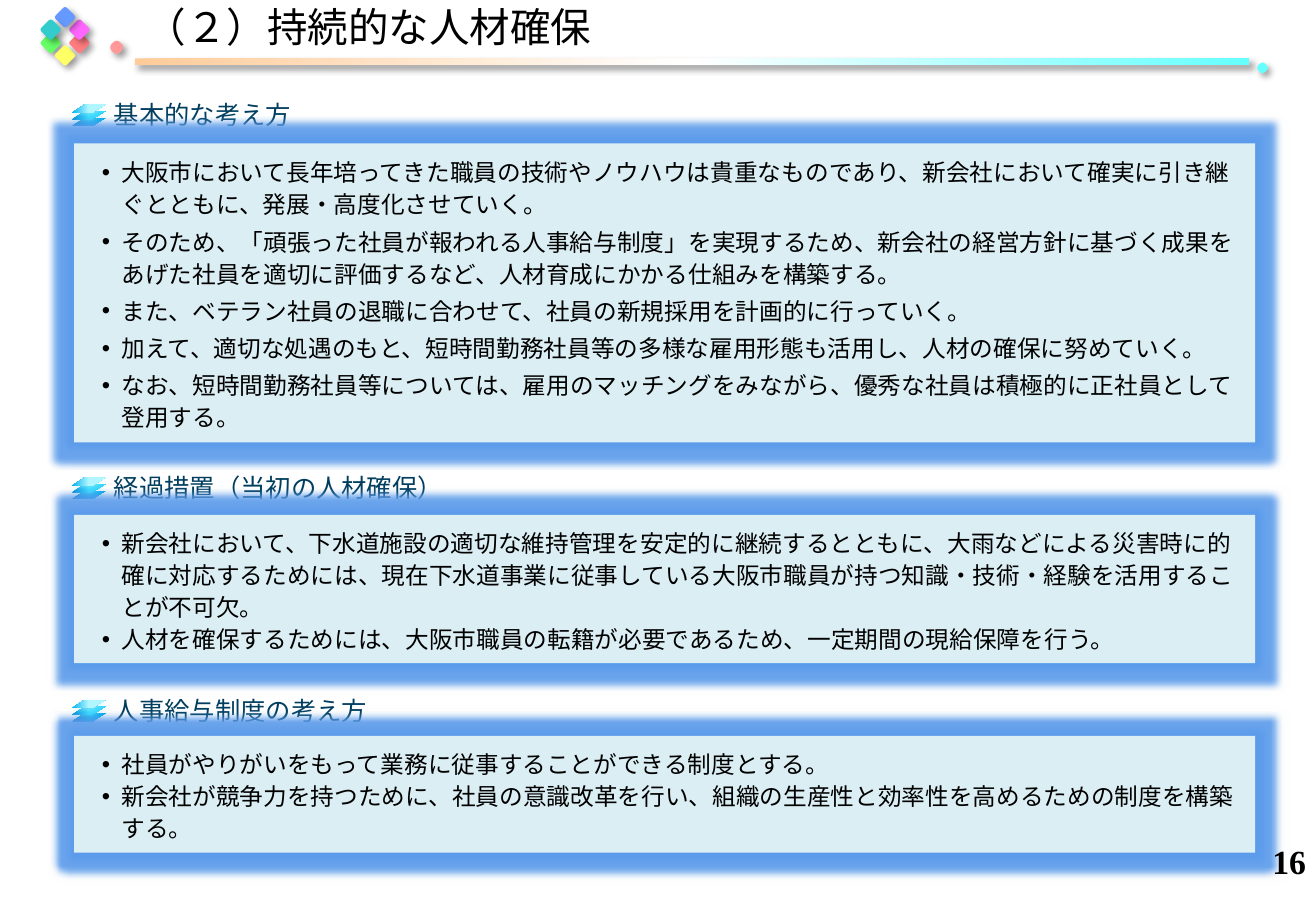
from copy import deepcopy

from lxml.etree import SubElement
from pptx import Presentation
from pptx.dml.color import RGBColor
from pptx.enum.lang import MSO_LANGUAGE_ID
from pptx.enum.shapes import MSO_SHAPE
from pptx.enum.text import MSO_ANCHOR, MSO_AUTO_SIZE, PP_ALIGN
from pptx.oxml.ns import qn
from pptx.util import Cm, Pt

SANS = "Noto Sans CJK JP"
SERIF = "Times New Roman"
HUES = {
    "ink": "000000", "head": "003E60", "panel": "DBEEF4", "shade": "B7DEE8",
    "glow": "5B9BEB", "ice": "B1F6FF", "green": "66FF66", "yellow": "FFFF66",
    "coral": "FF7C80", "pink": "FF66FF", "blue": "6699FF", "teal": "33CCCC",
    "peach": "FFCC99", "white": "FFFFFF", "aqua": "66FFFF", "rose": "FF9999",
    "deep": "0070C0", "sky": "00B0F0", "mid": "008BD8", "light": "39D9FF",
    "top": "00B1F0",
}
GEMS = [("green", -0.3, 0.14), ("yellow", 0, 0.4), ("coral", 0.3, 0.14),
        ("pink", 0.3, -0.14), ("blue", 0, -0.4), ("teal", -0.3, -0.14)]
LAYERS = [(1.57, "deep", "sky"), (1.6, "mid", "light"), (1.53, "top", "ice")]
DARK = ("ink", 40, 4, 3, 45)
SECTIONS = [
    ("基本的な考え方", 1.98, 3.0, 6.25, 3, [
        "大阪市において長年培ってきた職員の技術やノウハウは貴重なものであり、新会社において確実に引き継ぐとともに、発展・高度化させていく。",
        "そのため、「頑張った社員が報われる人事給与制度」を実現するため、新会社の経営方針に基づく成果をあげた社員を適切に評価するなど、人材育成にかかる仕組みを構築する。",
        "また、ベテラン社員の退職に合わせて、社員の新規採用を計画的に行っていく。",
        "加えて、適切な処遇のもと、短時間勤務社員等の多様な雇用形態も活用し、人材の確保に努めていく。",
        "なお、短時間勤務社員等については、雇用のマッチングをみながら、優秀な社員は積極的に正社員として登用する。",
    ]),
    ("経過措置（当初の人材確保）", 9.78, 10.77, 3.1, 0, [
        "新会社において、下水道施設の適切な維持管理を安定的に継続するとともに、大雨などによる災害時に的確に対応するためには、現在下水道事業に従事している大阪市職員が持つ知識・技術・経験を活用することが不可欠。",
        "人材を確保するためには、大阪市職員の転籍が必要であるため、一定期間の現給保障を行う。",
    ]),
    ("人事給与制度の考え方", 14.43, 15.39, 2.44, 0, [
        "社員がやりがいをもって業務に従事することができる制度とする。",
        "新会社が競争力を持つために、社員の意識改革を行い、組織の生産性と効率性を高めるための制度を構築する。",
    ]),
]


def color(name):
    """Return the named colour."""
    return RGBColor.from_string(HUES[name])


def tint(node, name, alpha):
    """Add a part-clear colour to an effect."""
    clr = SubElement(node, qn("a:srgbClr"), val=HUES[name])
    SubElement(clr, qn("a:alpha"), val=str(alpha * 1000))


def effect(shape, shade, glow=0):
    """Give a shape a shadow and, if asked, a glow."""
    shape.shadow.inherit = False
    name, alpha, blur, dist, angle = shade
    group = shape._element.spPr.find(qn("a:effectLst"))
    if glow:
        tint(SubElement(group, qn("a:glow"), rad=str(Pt(glow))), "glow", 90)
    node = SubElement(group, qn("a:outerShdw"), blurRad=str(Pt(blur)),
                      dist=str(Pt(dist)), dir=str(angle * 60000),
                      algn="ctr", rotWithShape="0")
    tint(node, name, alpha)


def blend(shape, stops):
    """Fill a shape with a left-to-right gradient."""
    fill = shape.fill
    fill.gradient()
    fill.gradient_angle = 0
    group = shape._element.spPr.find(".//" + qn("a:gsLst"))
    while len(group) < len(stops):
        group.append(deepcopy(group[0]))
    for stop, (place, name) in zip(fill.gradient_stops, stops):
        stop.position = place
        stop.color.rgb = color(name)


def block(slide, kind, box, name=None, turn=0, curve=None):
    """Add a shape without outline."""
    shape = slide.shapes.add_shape(kind, *[Cm(n) for n in box])
    shape.shadow.inherit = False
    shape.line.fill.background()
    shape.rotation = turn
    if curve is not None:
        shape.adjustments[0] = curve
    if name:
        shape.fill.solid()
        shape.fill.fore_color.rgb = color(name)
    else:
        shape.fill.background()
    return shape


def style(para, size, name="ink", face=SANS, bold=False):
    """Format the runs of a paragraph."""
    for run in para.runs:
        font = run.font
        font.size, font.bold, font.name = Pt(size), bold, face
        font.color.rgb = color(name)
        font.language_id = MSO_LANGUAGE_ID.JAPANESE
        SubElement(run._r.get_or_add_rPr(), qn("a:ea"), typeface=face)


def setup(shape, wrap, inset=None):
    """Prepare a text frame with middle anchor."""
    frame = shape.text_frame
    frame.word_wrap = wrap
    frame.auto_size = MSO_AUTO_SIZE.NONE
    frame.vertical_anchor = MSO_ANCHOR.MIDDLE
    if inset is not None:
        frame.margin_left = frame.margin_right = Cm(inset)
        frame.margin_top = frame.margin_bottom = Cm(inset)
    return frame


def gem(slide, mid, size, name, curve=None):
    """Add a rounded diamond around its centre."""
    left, top = (n - size / 2 for n in mid)
    shape = block(slide, MSO_SHAPE.ROUNDED_RECTANGLE,
                  (left, top, size, size), name, 45, curve)
    effect(shape, DARK)


def banner(slide):
    """Draw the diamonds and the rule under the title."""
    for name, right, down in GEMS:
        gem(slide, (1.36 + right, 0.76 + down), 0.33, name)
    bar = block(slide, MSO_SHAPE.ROUNDED_RECTANGLE, (2.82, 1.22, 23.29, 0.15))
    blend(bar, [(0, "peach"), (0.5, "white"), (1, "aqua")])
    effect(bar, DARK)
    gem(slide, (26.39, 1.42), 0.2, "aqua", 0.38)
    gem(slide, (2.44, 0.99), 0.25, "rose", 0.38)


def title(slide, text):
    """Place and format the slide title."""
    shape = slide.shapes.title
    shape.left, shape.top, shape.width, shape.height = (
        Cm(n) for n in (2.79, 0, 23.29, 1.09))
    frame = setup(shape, False)
    frame.text = text
    para = frame.paragraphs[0]
    para.alignment = PP_ALIGN.LEFT
    para.space_before = Pt(6)
    style(para, 24)


def header(slide, text, top):
    """Add a section heading with its stacked icon."""
    shape = block(slide, MSO_SHAPE.ROUNDED_RECTANGLE,
                  (2.26, top, 3.25, 0.84), curve=0.09)
    frame = setup(shape, False, 0.1)
    frame.text = text
    frame.paragraphs[0].alignment = PP_ALIGN.LEFT
    style(frame.paragraphs[0], 15, "head")
    for row, (slant, start, end) in enumerate(LAYERS):
        layer = block(slide, MSO_SHAPE.PARALLELOGRAM,
                      (1.5, top + 0.48 - 0.14 * row, 0.71, 0.18), curve=slant)
        blend(layer, [(0, start), (0.5, end)])
        effect(layer, ("ice", 40, 2, 1, 90))


def panel(slide, top, high, gap, items):
    """Add a glowing panel of bullets."""
    shape = block(slide, MSO_SHAPE.RECTANGLE, (1.55, top, 24.69, high), "panel")
    effect(shape, ("shade", 75, 5, 2, 0), 8)
    frame = setup(shape, True, 0.2)
    frame.auto_size = MSO_AUTO_SIZE.SHAPE_TO_FIT_TEXT
    frame.text = "\n".join(items)
    for row, para in enumerate(frame.paragraphs):
        para.alignment = PP_ALIGN.LEFT
        para.line_spacing = Pt(19)
        para.space_before = Pt(gap if row else 0)
        props = para._p.get_or_add_pPr()
        props.set("marL", str(Cm(0.79)))
        props.set("indent", str(Cm(-0.41)))
        SubElement(props, qn("a:buFont"), typeface="Arial")
        SubElement(props, qn("a:buChar"), char="•")
        style(para, 14)


def number(slide, text):
    """Add the page number."""
    shape = slide.shapes.add_textbox(Cm(26.01), Cm(17.5), Cm(1.88), Cm(1.02))
    frame = setup(shape, True)
    frame.text = text
    frame.paragraphs[0].alignment = PP_ALIGN.CENTER
    style(frame.paragraphs[0], 20, face=SERIF, bold=True)


def main():
    """Build the slide and save it."""
    deck = Presentation()
    deck.slide_width, deck.slide_height = Cm(27.51), Cm(19.05)
    slide = deck.slides.add_slide(deck.slide_layouts[5])
    banner(slide)
    title(slide, "（２）持続的な人材確保")
    for text, head, top, high, gap, items in SECTIONS:
        header(slide, text, head)
        panel(slide, top, high, gap, items)
    number(slide, "16")
    deck.save("out.pptx")


if __name__ == "__main__":
    main()
